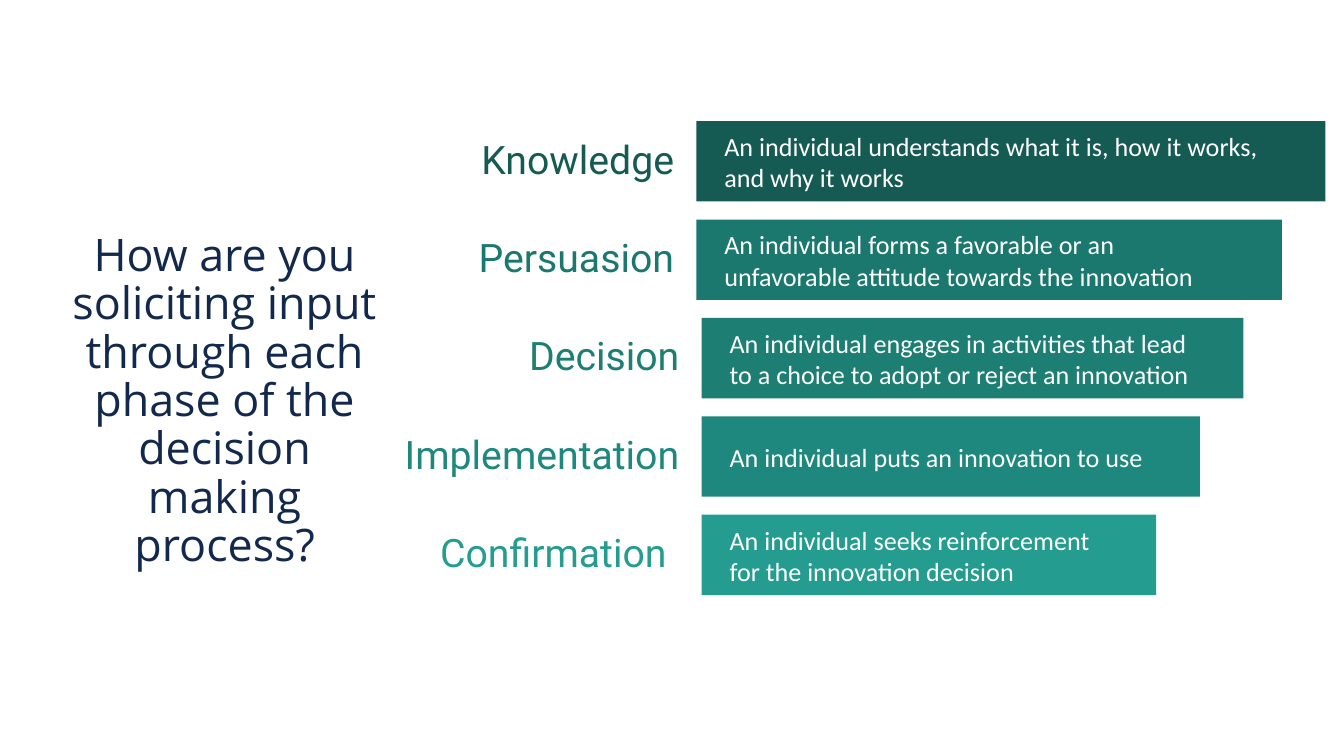
from dataclasses import dataclass
from typing import NamedTuple

from pptx import Presentation
from pptx.dml.color import RGBColor
from pptx.enum.shapes import MSO_SHAPE as Preset
from pptx.enum.text import MSO_ANCHOR as Anchor, PP_ALIGN as Align
from pptx.slide import Slide
from pptx.util import Cm, Pt


class TextStyle(NamedTuple):
    font: str
    size: float
    line_spacing: float


@dataclass(frozen=True)
class Theme:
    title: TextStyle = TextStyle("Open Sans", 24, 0.9)
    label: TextStyle = TextStyle("Roboto", 21, 0.9)
    description: TextStyle = TextStyle("Calibri", 14, 1.0)
    navy: str = "12284C"
    white: str = "FFFFFF"
    greens: tuple[str, ...] = ("155B54", "1B786E", "1D7E74", "1F887E", "249C90")


class Frame(NamedTuple):
    left: float
    top: float
    width: float
    height: float

    def lengths(self) -> list[Cm]:
        return [Cm(value) for value in self]


@dataclass(frozen=True)
class Phase:
    name: str
    description: str
    bar_left: float
    bar_width: float
    label_width: float
    description_width: float
    label_align: Align = Align.RIGHT


THEME = Theme()
FIRST_TOP, ROW_STEP, BAR_HEIGHT = 2.29, 1.86, 1.52
LABEL_GAP, LABEL_INSET, LABEL_HEIGHT = 0.17, 0.1, 1.32
DESCRIPTION_INDENT, DESCRIPTION_INSET, DESCRIPTION_HEIGHT = 0.28, 0.16, 1.22

PHASES = (
    Phase("Knowledge", "An individual understands what it is, how it works, and why it works",
          13.16, 11.89, 5.18, 10.85),
    Phase("Persuasion", "An individual forms a favorable or an unfavorable attitude towards the innovation",
          13.16, 11.07, 4.93, 9.96),
    Phase("Decision", "An individual engages in activities that lead to a choice to adopt or reject an innovation",
          13.26, 10.24, 4.78, 9.35),
    Phase("Implementation", "An individual puts an innovation to use",
          13.26, 9.42, 5.99, 8.76),
    Phase("Confirmation", "An individual seeks reinforcement for the innovation decision",
          13.26, 8.59, 5.26, 7.95, Align.CENTER),
)


def add_text(page: Slide, frame: Frame, text: str, style: TextStyle, color: str,
             align: Align = Align.LEFT, anchor: Anchor = Anchor.MIDDLE,
             inset: tuple[float, float] = (0.25, 0.13)) -> None:
    box = page.shapes.add_textbox(*frame.lengths()).text_frame
    side, end = (Cm(value) for value in inset)
    para = box.paragraphs[0]
    span = para.add_run()
    span.text = text
    formats = {
        box: {"word_wrap": True, "vertical_anchor": anchor,
              "margin_left": side, "margin_right": side,
              "margin_top": end, "margin_bottom": end},
        para: {"alignment": align, "line_spacing": style.line_spacing},
        span.font: {"name": style.font, "size": Pt(style.size)},
    }
    for target, values in formats.items():
        for name, value in values.items():
            setattr(target, name, value)
    span.font.color.rgb = RGBColor.from_string(color)


def add_bar(page: Slide, frame: Frame, color: str) -> None:
    bar = page.shapes.add_shape(Preset.RECTANGLE, *frame.lengths())
    bar.shadow.inherit = False
    bar.fill.solid()
    bar.fill.fore_color.rgb = RGBColor.from_string(color)
    bar.line.fill.background()


def add_phase(page: Slide, phase: Phase, top: float, color: str) -> None:
    label_left = phase.bar_left - LABEL_GAP - phase.label_width
    add_text(page, Frame(label_left, top + LABEL_INSET, phase.label_width, LABEL_HEIGHT),
             phase.name, THEME.label, color, phase.label_align)
    add_bar(page, Frame(phase.bar_left, top, phase.bar_width, BAR_HEIGHT), color)
    add_text(page, Frame(phase.bar_left + DESCRIPTION_INDENT, top + DESCRIPTION_INSET,
                         phase.description_width, DESCRIPTION_HEIGHT),
             phase.description, THEME.description, THEME.white)


def main() -> None:
    deck = Presentation()
    deck.slide_width, deck.slide_height = Cm(25.4), Cm(14.29)
    page = deck.slides.add_slide(deck.slide_layouts[6])

    # Question on the left
    add_text(page, Frame(1.02, 2.44, 6.45, 8.46),
             "How are you soliciting input through each phase of the decision making process?",
             THEME.title, THEME.navy, Align.CENTER, Anchor.BOTTOM, (0.18, 0.1))

    # Phases as shrinking bars
    for row, (phase, color) in enumerate(zip(PHASES, THEME.greens)):
        add_phase(page, phase, FIRST_TOP + row * ROW_STEP, color)

    deck.save("out.pptx")


if __name__ == "__main__":
    main()
